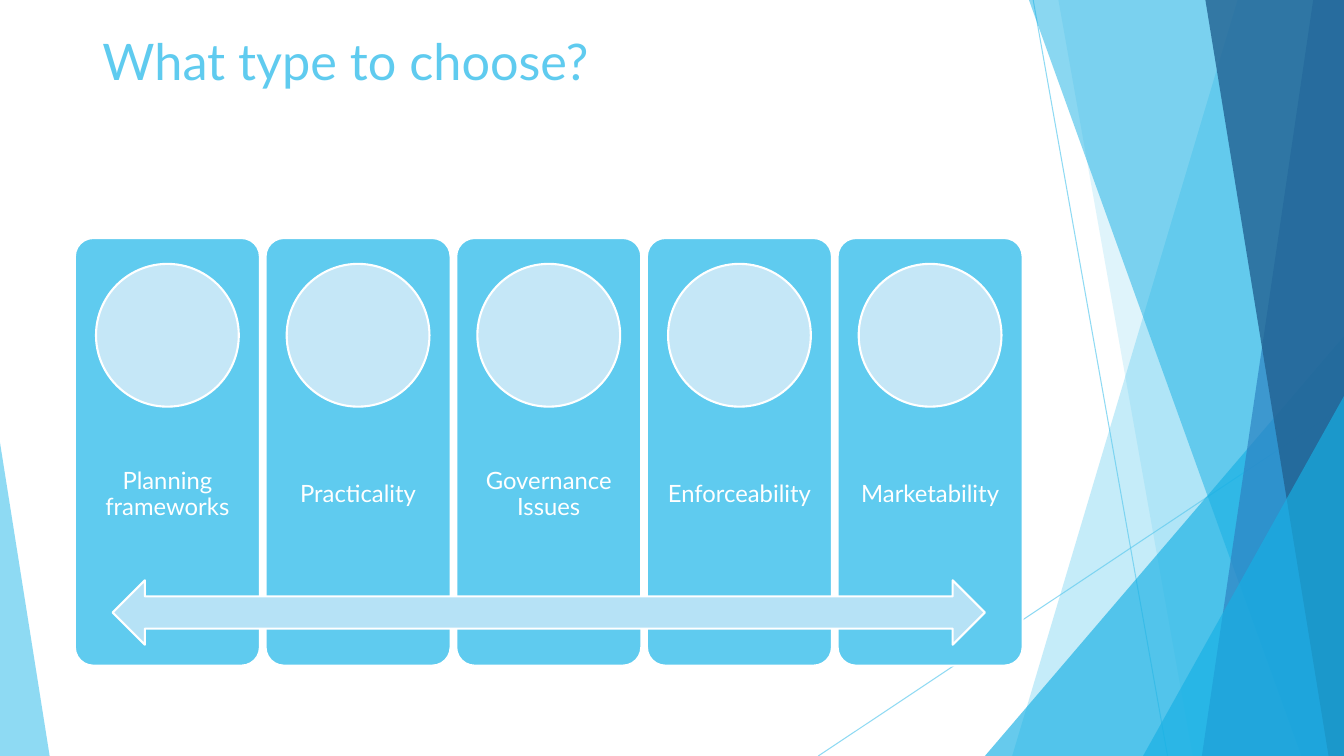
from lxml.etree import SubElement
from pptx import Presentation
from pptx.dml.color import RGBColor
from pptx.enum.shapes import MSO_CONNECTOR, MSO_SHAPE
from pptx.enum.text import MSO_ANCHOR, PP_ALIGN
from pptx.oxml.ns import qn
from pptx.util import Pt

WHITE = RGBColor(0xFF, 0xFF, 0xFF)
SKY = RGBColor(0x5F, 0xCB, 0xEF)
CYAN = RGBColor(0x17, 0xB0, 0xE4)
BLUE = RGBColor(0x2E, 0x83, 0xC3)
NAVY = RGBColor(0x22, 0x62, 0x92)
PALE = RGBColor(0xC5, 0xE7, 0xF7)
ARROW = RGBColor(0xB6, 0xE2, 0xF6)
W, H = 960, 540


def paint(shape, color, alpha=100, outlined=False):
    shape.shadow.inherit = False
    shape.fill.solid()
    shape.fill.fore_color.rgb = color
    if alpha < 100:
        clr = shape.element.spPr.find(f"{qn('a:solidFill')}/{qn('a:srgbClr')}")
        SubElement(clr, qn("a:alpha"), val=str(alpha * 1000))
    if outlined:
        shape.line.color.rgb = WHITE
        shape.line.width = Pt(1.5)
    else:
        shape.line.fill.background()


def write(shape, text, size, color, align, anchor, inset=None, spacing=None, after=0):
    tf = shape.text_frame
    tf.word_wrap = True
    tf.vertical_anchor = anchor
    if inset is not None:
        tf.margin_left = tf.margin_right = tf.margin_top = tf.margin_bottom = Pt(inset)
    p = tf.paragraphs[0]
    p.alignment = align
    p.line_spacing = spacing
    p.space_before, p.space_after = Pt(0), Pt(after)
    r = p.add_run()
    r.text = text
    r.font.name = "Lato"
    r.font.size = Pt(size)
    r.font.color.rgb = color


prs = Presentation()
prs.slide_width, prs.slide_height = Pt(W), Pt(H)
s = prs.slides.add_slide(prs.slide_layouts[5])

for x1, y1, x2, y2 in [(738, 0, 834, H), (W, 290, 584.5, H)]:
    ray = s.shapes.add_connector(MSO_CONNECTOR.STRAIGHT, Pt(x1), Pt(y1), Pt(x2), Pt(y2))
    ray.line.color.rgb = SKY
    ray.line.width = Pt(0.75)
    clr = ray.line.fill.fore_color
    for clr in ray.element.spPr.iter(qn("a:srgbClr")):
        SubElement(clr, qn("a:alpha"), val="70000")
    SubElement(ray.element.spPr, qn("a:effectLst"))

facets = [
    (884, 723, W, 0, SKY, 36),
    (756, 852, W, 0, SKY, 20),
    (W, 703.5, W, 240, CYAN, 66),
    (735, 929.5, W, 0, CYAN, 50),
    (938, 858.5, W, 0, BLUE, 70),
    (861, 949, W, 0, NAVY, 80),
    (W, 816.5, W, 283, CYAN, 66),
    (0, 0, 35.5, 316, SKY, 70),
]
for upper, lower, right, top, color, alpha in facets:
    if top:
        facet = s.shapes.add_shape(MSO_SHAPE.ISOSCELES_TRIANGLE, Pt(lower), Pt(top),
                                   Pt(right - lower), Pt(H - top))
        facet.adjustments[0] = (upper - lower) / (right - lower)
    else:
        fb = s.shapes.build_freeform(Pt(upper), 0)
        fb.add_line_segments([(Pt(right), 0), (Pt(right), Pt(H)), (Pt(lower), Pt(H))])
        facet = fb.convert_to_shape()
    paint(facet, color, alpha)

title = s.shapes.title
title.left, title.top, title.width, title.height = Pt(66), Pt(18), Pt(828), Pt(104.5)
write(title, "What type to choose?", size=36, color=SKY, align=PP_ALIGN.LEFT,
      anchor=MSO_ANCHOR.TOP)
s.shapes.element.append(title.element)

left, pitch, card_w, disc = 53.5, 136.2, 132.2, 102
criteria = ["Planning frameworks", "Practicality", "Governance Issues",
            "Enforceability", "Marketability"]
for i, name in enumerate(criteria):
    x = left + i * pitch
    card = s.shapes.add_shape(MSO_SHAPE.ROUNDED_RECTANGLE, Pt(x), Pt(170), Pt(card_w), Pt(305.5))
    card.adjustments[0] = 0.1
    paint(card, SKY, outlined=True)
    label = s.shapes.add_textbox(Pt(x), Pt(292.5), Pt(card_w), Pt(122))
    write(label, name, size=17, color=WHITE, align=PP_ALIGN.CENTER,
          anchor=MSO_ANCHOR.MIDDLE, inset=9.4, spacing=0.9, after=6)
    circle = s.shapes.add_shape(MSO_SHAPE.OVAL, Pt(x + (card_w - disc) / 2), Pt(188.5),
                                Pt(disc), Pt(disc))
    paint(circle, PALE, outlined=True)

arrow = s.shapes.add_shape(MSO_SHAPE.LEFT_RIGHT_ARROW, Pt(80.5), Pt(414.5), Pt(623), Pt(46))
paint(arrow, ARROW, outlined=True)

prs.save("out.pptx")
